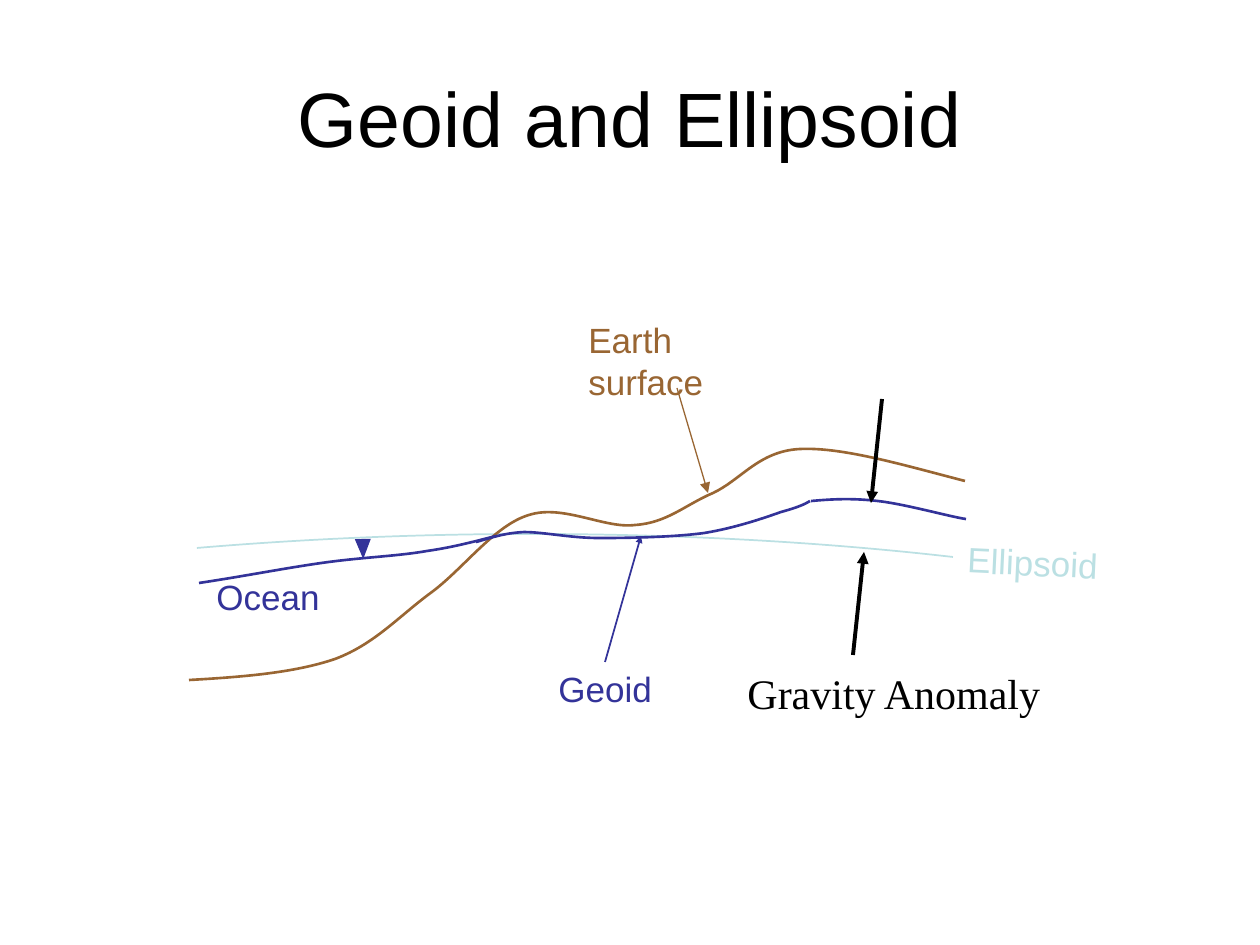
from lxml import etree
from pptx import Presentation
from pptx import util as u
from pptx.dml import color
from pptx.enum import shapes, text
from pptx.oxml import ns

PX = 914400 / 126
COLORS = {
    "ellipsoid": "BBE0E3",
    "earth": "996633",
    "geoid": "333399",
    "ink": "000000",
}


def px(*lengths):
    """Turn px lengths into EMU."""
    return [u.Emu(round(length * PX)) for length in lengths]


def rgb(name):
    """Look up a named colour."""
    return color.RGBColor.from_string(COLORS[name])


def style_line(shape, name, width):
    """Set the colour and the width in points of a line."""
    shape.line.color.rgb = rgb(name)
    shape.line.width = u.Pt(width)


def style_paragraph(para, name, size, font):
    """Set the font of a whole paragraph."""
    para.font.name = font
    para.font.size = u.Pt(size)
    para.font.color.rgb = rgb(name)


def add_title(page, words):
    """Fill and place the title placeholder."""
    title = page.shapes.title
    title.left, title.top, title.width, title.height = px(63, 38, 1134, 158)
    title.text_frame.text = words
    title.text_frame.vertical_anchor = text.MSO_ANCHOR.MIDDLE
    para = title.text_frame.paragraphs[0]
    para.alignment = text.PP_ALIGN.CENTER
    style_paragraph(para, "ink", 44, "Arial")


def add_label(page, words, bounds, name, size=20, font="Arial", rotation=0, wrap=False):
    """Add a text label."""
    box = page.shapes.add_textbox(*px(*bounds))
    box.rotation = rotation
    frame = box.text_frame
    frame.word_wrap = wrap
    frame.auto_size = text.MSO_AUTO_SIZE.SHAPE_TO_FIT_TEXT
    frame.text = words
    style_paragraph(frame.paragraphs[0], name, size, font)


def add_curve(page, start, segments, name, width=1.5):
    """Draw an open curve of cubic segments, each two controls and an end."""
    ends = [segment[2] for segment in segments]
    builder = page.shapes.build_freeform(*start, scale=PX)
    builder.add_line_segments(ends, close=False)
    curve = builder.convert_to_shape()
    curve.shadow.inherit = False
    curve.fill.background()
    style_line(curve, name, width)
    left, top = (min(values) for values in zip(start, *ends))
    for line, segment in zip(curve.element.xpath(".//a:lnTo"), segments):
        bezier = etree.Element(ns.qn("a:cubicBezTo"))
        for x, y in segment:
            etree.SubElement(bezier, ns.qn("a:pt"), x=str(x - left), y=str(y - top))
        line.getparent().replace(line, bezier)


def add_arrow(page, start, end, name, width, head="med"):
    """Draw a straight arrow with a triangle at its end."""
    arrow = page.shapes.add_connector(
        shapes.MSO_CONNECTOR.STRAIGHT, *px(*start, *end))
    style_line(arrow, name, width)
    etree.SubElement(arrow.element.spPr.find(ns.qn("a:ln")), ns.qn("a:tailEnd"),
                     type="triangle", w=head, len=head)
    etree.SubElement(arrow.element.spPr, ns.qn("a:effectLst"))


def add_water_mark(page):
    """Draw the water level triangle."""
    mark = page.shapes.add_shape(
        shapes.MSO_SHAPE.ISOSCELES_TRIANGLE, *px(355, 539, 16, 20))
    mark.rotation = 178.8
    mark.shadow.inherit = False
    mark.fill.solid()
    mark.fill.fore_color.rgb = rgb("geoid")
    mark.line.fill.background()


def add_surfaces(page):
    """Draw the ellipsoid, the earth surface and the three geoid parts."""
    add_curve(page, (197, 548), [
        ((304, 539), (417, 534), (530, 534)),
        ((679, 534), (822, 542), (953, 557)),
    ], "ellipsoid", 1)
    add_curve(page, (189, 680), [
        ((242, 677), (294, 673), (335, 659)),
        ((375, 644), (399, 616), (432, 592)),
        ((464, 568), (495, 525), (529, 515)),
        ((563, 504), (605, 529), (635, 525)),
        ((667, 523), (685, 505), (713, 493)),
        ((741, 480), (759, 451), (800, 449)),
        ((843, 447), (903, 465), (965, 481)),
    ], "earth")
    add_curve(page, (811, 501), [
        ((832, 499), (853, 498), (878, 501)),
        ((905, 504), (951, 517), (966, 519)),
    ], "geoid")
    add_curve(page, (476, 542), [
        ((490, 538), (504, 533), (524, 532)),
        ((544, 532), (570, 538), (600, 538)),
        ((630, 538), (674, 537), (704, 533)),
        ((735, 528), (764, 518), (781, 512)),
        ((799, 507), (805, 504), (810, 501)),
    ], "geoid")
    add_curve(page, (199, 583), [
        ((246, 576), (291, 567), (329, 562)),
        ((367, 557), (399, 556), (427, 551)),
        ((455, 547), (476, 541), (496, 536)),
    ], "geoid")


def main():
    """Build the slide and save it."""
    deck = Presentation()
    deck.slide_width, deck.slide_height = px(1260, 945)
    page = deck.slides.add_slide(deck.slide_layouts[5])
    add_title(page, "Geoid and Ellipsoid")
    add_surfaces(page)
    add_water_mark(page)
    add_label(page, "Ocean", (204, 569, 132, 54), "geoid")
    add_label(page, "Geoid", (546, 661, 124, 54), "geoid")
    add_label(page, "Earth surface", (576, 312, 230, 54), "earth", wrap=True)
    add_label(page, "Ellipsoid", (955, 535, 158, 54), "ellipsoid", rotation=2.8)
    add_label(page, "Gravity Anomaly", (735, 661, 322, 63), "ink", 24, "Times New Roman")
    add_arrow(page, (605, 662), (641, 536), "geoid", 1, "sm")
    add_arrow(page, (677, 388), (708, 493), "earth", 0.75)
    add_arrow(page, (882, 399), (871, 503), "ink", 2.25)
    add_arrow(page, (853, 655), (864, 552), "ink", 2.25)
    deck.save("out.pptx")


if __name__ == "__main__":
    main()
